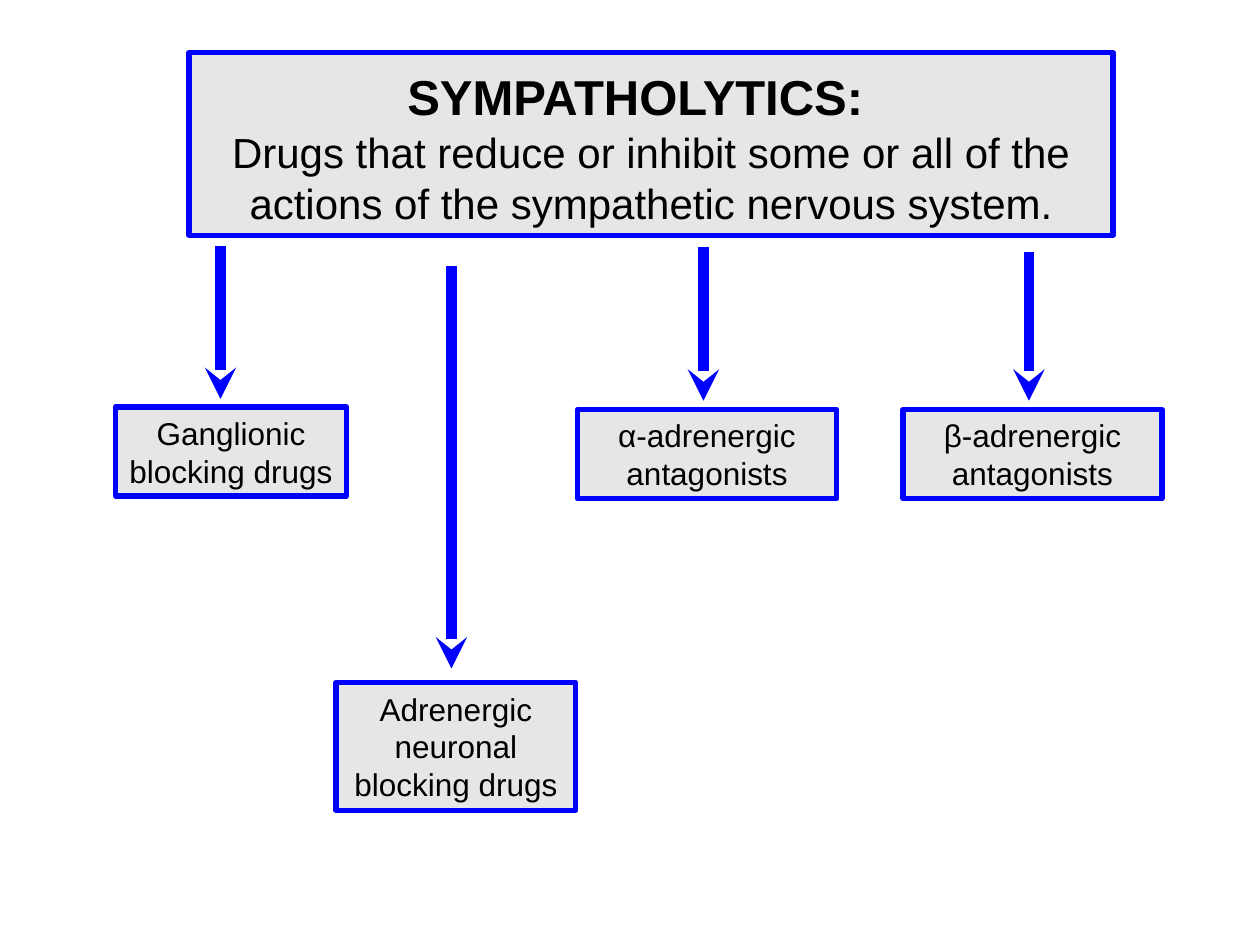
from pptx import Presentation
from pptx.dml.color import RGBColor
from pptx.enum.shapes import MSO_CONNECTOR, MSO_SHAPE
from pptx.enum.text import MSO_ANCHOR, PP_ALIGN
from pptx.oxml.ns import qn
from pptx.util import Pt
from lxml import etree

RECTANGLE = MSO_SHAPE.RECTANGLE
STRAIGHT = MSO_CONNECTOR.STRAIGHT
MIDDLE = MSO_ANCHOR.MIDDLE
CENTER = PP_ALIGN.CENTER


def color(value):
    """Turn a hex string into a colour."""
    return RGBColor.from_string(value)


def apply_format(target, values):
    """Set each attribute of the target from a dict."""
    for name, value in values.items():
        setattr(target, name, value)


class Diagram:
    """Holds the style and the current slide."""

    blue, gray, black = "0000FF", "E6E6E6", "000000"
    border, arrow_width = 3, 6
    font = {"name": "Arial", "bold": False}
    frame = {
        "word_wrap": True, "vertical_anchor": MIDDLE,
        "margin_left": Pt(7.2), "margin_right": Pt(7.2),
        "margin_top": Pt(3.6), "margin_bottom": Pt(3.6),
    }

    def __init__(self, slide):
        """Keep the slide to draw on."""
        self.slide = slide

    def style_line(self, line, width):
        """Give a line the diagram colour and a width."""
        line.color.rgb = color(self.blue)
        line.width = Pt(width)

    def box(self, left, top, width, height, paragraphs, **margins):
        """Add a bordered box with (text, font values, left indent) paragraphs."""
        shape = self.slide.shapes.add_shape(
            RECTANGLE, Pt(left), Pt(top), Pt(width), Pt(height))
        shape.shadow.inherit = False
        shape.fill.solid()
        shape.fill.fore_color.rgb = color(self.gray)
        self.style_line(shape.line, self.border)
        frame = shape.text_frame
        apply_format(frame, {**self.frame, **margins})
        for index, (text, font, indent) in enumerate(paragraphs):
            paragraph = frame.add_paragraph() if index else frame.paragraphs[0]
            paragraph.alignment = CENTER
            if indent:
                paragraph._p.get_or_add_pPr().set("marL", str(Pt(indent)))
            run = paragraph.add_run()
            run.text = text
            apply_format(run.font, {**self.font, **font})
            run.font.color.rgb = color(self.black)
        return shape

    def arrow(self, x, top, bottom):
        """Add a vertical arrow pointing down."""
        connector = self.slide.shapes.add_connector(
            STRAIGHT, Pt(x), Pt(top), Pt(x), Pt(bottom))
        self.style_line(connector.line, self.arrow_width)
        outline = connector.line._get_or_add_ln()
        etree.SubElement(outline, qn("a:tailEnd"), type="stealth")
        etree.SubElement(connector._element.spPr, qn("a:effectLst"))


def main():
    """Build the slide and save it."""
    presentation = Presentation()
    presentation.slide_width, presentation.slide_height = Pt(720), Pt(540)
    slide = presentation.slides.add_slide(presentation.slide_layouts[6])
    diagram = Diagram(slide)

    shift = 18
    heading = diagram.box(108, 30, 528, 104.4, [
        ("SYMPATHOLYTICS:", {"size": Pt(28), "bold": True}, 0),
        ("Drugs that reduce or inhibit some or all of the actions of the "
         "sympathetic nervous system.", {"size": Pt(24)}, shift),
    ], margin_left=0, margin_right=Pt(shift), margin_top=Pt(7.2))
    heading.text_frame.paragraphs[0].space_after = Pt(0.8)

    drug_classes = [
        ("Ganglionic blocking drugs", 66, 232.5, 132, 51),
        ("Adrenergic neuronal blocking drugs", 192, 390, 137, 73),
        ("α-adrenergic antagonists", 330, 234, 148, 51),
        ("β-adrenergic antagonists", 516, 234, 148, 51),
    ]
    for text, *place in drug_classes:
        diagram.box(*place, [(text, {"size": Pt(18)}, 0)])

    arrows = [(126, 140.5, 228), (258, 152, 382), (402, 141, 229), (588, 144, 229)]
    for place in arrows:
        diagram.arrow(*place)

    presentation.save("out.pptx")


if __name__ == "__main__":
    main()
